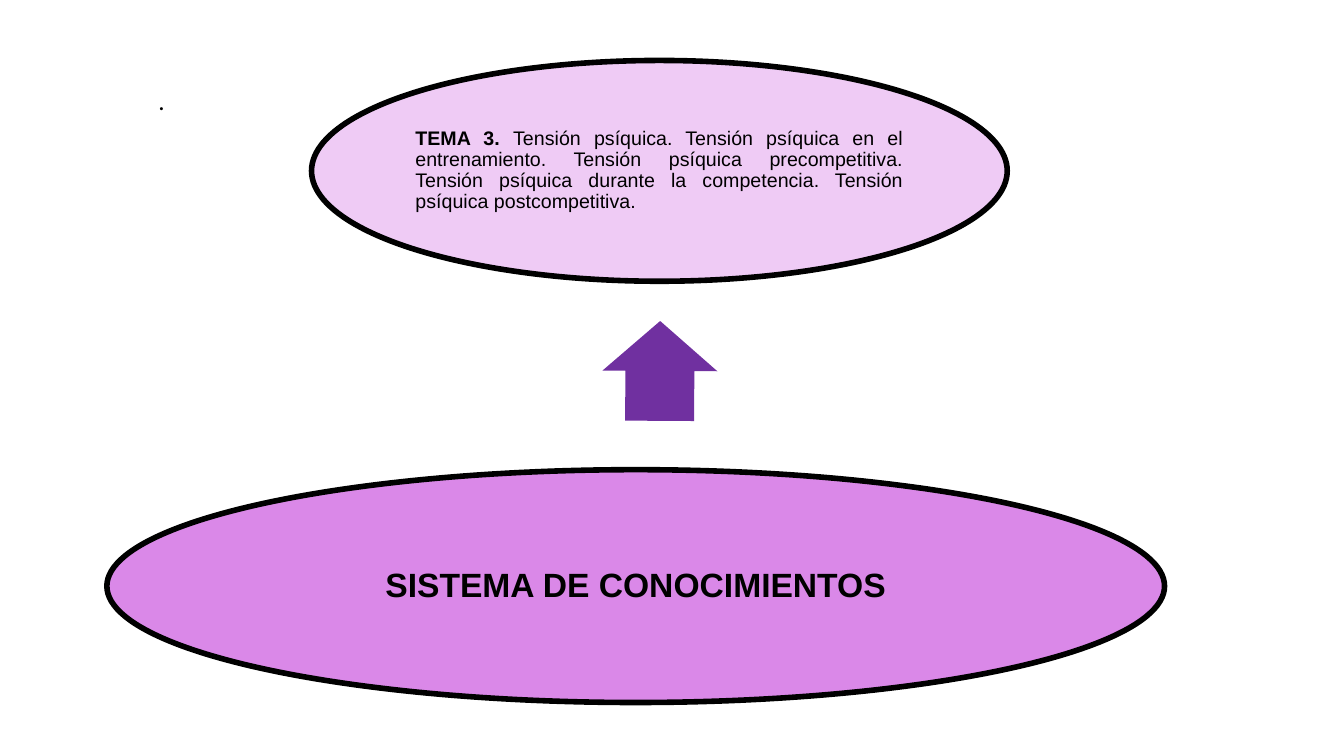
"""Builds a slide linking the knowledge system to its third topic."""
import pptx
import pptx.util
import pptx.dml.color
import pptx.enum.shapes
import pptx.enum.text

Inches = pptx.util.Inches
Pt = pptx.util.Pt
SHAPE = pptx.enum.shapes.MSO_SHAPE
ALIGN = pptx.enum.text.PP_ALIGN
ANCHOR = pptx.enum.text.MSO_ANCHOR

COLORS = {
    "black": "000000",
    "orchid": "DA88E8",
    "lilac": "EFCBF5",
    "purple": "7030A0",
}


def rgb(name):
    return pptx.dml.color.RGBColor.from_string(COLORS[name])


def add_run(p, text, size, font="Arial", bold=False):
    r = p.add_run()
    r.text = text
    r.font.name = font
    r.font.size = Pt(size)
    r.font.bold = bold
    r.font.color.rgb = rgb("black")


def set_title(s, text, box):
    sp = s.shapes.title
    sp.left, sp.top, sp.width, sp.height = map(Inches, box)
    tf = sp.text_frame
    tf.auto_size = pptx.enum.text.MSO_AUTO_SIZE.NONE
    tf.vertical_anchor = ANCHOR.TOP
    tf.margin_top = 0
    p = tf.paragraphs[0]
    p.alignment = ALIGN.LEFT
    add_run(p, text, 18, "Calibri")


def add_filled(s, kind, box, fill):
    sp = s.shapes.add_shape(kind, *map(Inches, box))
    sp.shadow.inherit = False
    sp.fill.solid()
    sp.fill.fore_color.rgb = rgb(fill)
    sp.line.fill.background()
    return sp


def add_ellipse(s, box, fill, runs, size, align, inset):
    sp = add_filled(s, SHAPE.OVAL, box, fill)
    sp.line.color.rgb = rgb("black")
    sp.line.width = Pt(4)
    tf = sp.text_frame
    tf.word_wrap = True
    tf.vertical_anchor = ANCHOR.MIDDLE
    tf.margin_left = tf.margin_right = Inches(inset)
    tf.margin_top = tf.margin_bottom = Inches(inset)
    p = tf.paragraphs[0]
    p.alignment = align
    p.line_spacing = 0.9
    for text, bold in runs:
        add_run(p, text, size, bold=bold)


def add_arrow(s, box):
    sp = add_filled(s, SHAPE.RIGHT_ARROW, box, "purple")
    sp.rotation = 270.3
    sp.adjustments[0] = 0.6
    sp.adjustments[1] = 0.5


def main():
    prs = pptx.Presentation()
    prs.slide_width = Inches(13.33)
    prs.slide_height = Inches(7.5)
    s = prs.slides.add_slide(prs.slide_layouts[5])

    set_title(s, ".", (1.47, 0.85, 10.14, 1.25))
    add_ellipse(s, (1.06, 4.66, 10.49, 2.31), "orchid",
                [("SISTEMA DE CONOCIMIENTOS", True)], 24, ALIGN.CENTER, 0.03)
    add_arrow(s, (6.05, 3.11, 0.99, 1.14))
    topic = [
        ("TEMA 3. ", True),
        ("Tensión psíquica. Tensión psíquica en el entrenamiento. "
         "Tensión psíquica precompetitiva. Tensión psíquica durante la "
         "competencia. Tensión psíquica postcompetitiva.", False),
    ]
    add_ellipse(s, (3.09, 0.6, 6.9, 2.19), "lilac", topic, 14,
                ALIGN.JUSTIFY, 0.02)

    prs.save("out.pptx")


if __name__ == "__main__":
    main()
